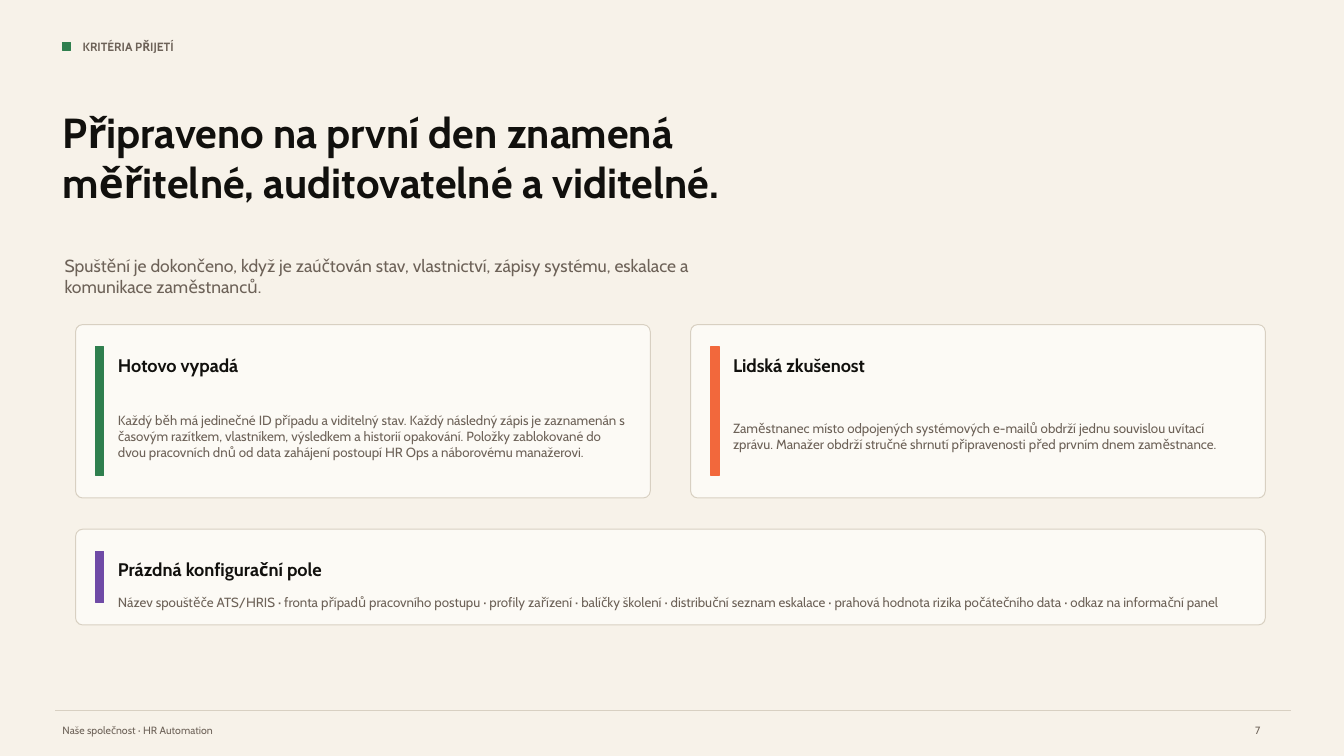
from lxml.etree import SubElement
from pptx import Presentation
from pptx.dml.color import RGBColor
from pptx.enum.shapes import MSO_CONNECTOR, MSO_SHAPE
from pptx.enum.text import MSO_ANCHOR, MSO_AUTO_SIZE, PP_ALIGN
from pptx.oxml.ns import qn
from pptx.util import Pt

PX = 9144
FONT = "Cabin"
CREAM = RGBColor(0xF7, 0xF2, 0xE9)
IVORY = RGBColor(0xFC, 0xFA, 0xF5)
SAND = RGBColor(0xD8, 0xD0, 0xC2)
INK = RGBColor(0x11, 0x10, 0x0D)
BROWN = RGBColor(0x6D, 0x62, 0x58)
GREEN = RGBColor(0x2F, 0x7F, 0x4E)
ORANGE = RGBColor(0xF2, 0x68, 0x3C)
PURPLE = RGBColor(0x6F, 0x4A, 0xA6)

CARD_RADIUS = 7
CARD_TOP, CARD_LEFT, CARD_WIDTH, CARD_STEP = 322, 75, 570, 610
TOP_CARDS = [
    ("Hotovo vypadá",
     "Každý běh má jedinečné ID případu a viditelný stav. Každý následný zápis je "
     "zaznamenán s časovým razítkem, vlastníkem, výsledkem a historií opakování. "
     "Položky zablokované do dvou pracovních dnů od data zahájení postoupí HR Ops "
     "a náborovému manažerovi.", GREEN),
    ("Lidská zkušenost",
     "Zaměstnanec místo odpojených systémových e-mailů obdrží jednu souvislou "
     "uvítací zprávu. Manažer obdrží stručné shrnutí připravenosti před prvním "
     "dnem zaměstnance.", ORANGE),
]
CONFIG_CARD = (
    "Prázdná konfigurační pole",
    "Název spouštěče ATS/HRIS · fronta případů pracovního postupu · profily zařízení · "
    "balíčky školení · distribuční seznam eskalace · prahová hodnota rizika "
    "počátečního data · odkaz na informační panel", PURPLE)


def emu(*lengths):
    """Turn px lengths into EMU."""
    return [length * PX for length in lengths]


def write(shape, text, size, color, bold=False):
    """Fill a shape with one left-aligned, vertically centred paragraph."""
    frame = shape.text_frame
    frame.word_wrap = True
    frame.auto_size = MSO_AUTO_SIZE.NONE
    frame.vertical_anchor = MSO_ANCHOR.MIDDLE
    frame.margin_left = frame.margin_right = frame.margin_top = frame.margin_bottom = 0
    frame.text = text
    para = frame.paragraphs[0]
    para.alignment = PP_ALIGN.LEFT
    para.font.name, para.font.size, para.font.bold = FONT, Pt(size), bold
    para.font.color.rgb = color


def add_text(page, box, text, size, color, bold=False):
    """Add a text box in the given box."""
    write(page.shapes.add_textbox(*emu(*box)), text, size, color, bold)


def add_block(page, kind, box, fill, line, weight):
    """Add a filled and outlined preset shape."""
    block = page.shapes.add_shape(kind, *emu(*box))
    block.shadow.inherit = False
    block.fill.solid()
    block.fill.fore_color.rgb = fill
    block.line.color.rgb = line
    block.line.width = Pt(weight)
    return block


def add_header(page, left, top):
    """Place the section label, the title and the lead text."""
    add_block(page, MSO_SHAPE.RECTANGLE, (left, top + 8, 8, 8), GREEN, GREEN, 1)
    add_text(page, (left + 20, top, 580, 25), "KRITÉRIA PŘIJETÍ", 8.5, BROWN, True)
    title = page.shapes.title
    title.left, title.top, title.width, title.height = emu(left, top + 54, 680, 135)
    write(title, "Připraveno na první den znamená měřitelné, auditovatelné a viditelné.",
          30, INK, True)
    add_text(page, (left + 2, top + 201, 635, 78),
             "Spuštění je dokončeno, když je zaúčtován stav, vlastnictví, zápisy systému, "
             "eskalace a komunikace zaměstnanců.", 12.5, BROWN)


def add_card(page, box, heading, body, accent):
    """Place a rounded card with an accent bar, a heading and a body."""
    left, top, width, height = box
    card = add_block(page, MSO_SHAPE.ROUNDED_RECTANGLE, box, IVORY, SAND, 0.7)
    card.adjustments[0] = CARD_RADIUS / height
    add_block(page, MSO_SHAPE.RECTANGLE, (left + 20, top + 22, 8, height - 44),
              accent, accent, 1)
    text_left, text_width = left + 42, width - 65
    add_text(page, (text_left, top + 25, text_width, 30), heading, 13, INK, True)
    add_text(page, (text_left, top + 68, text_width, height - 86), body, 9.5, BROWN)


def add_footer(page, left, top, width):
    """Place the footer rule, the deck name and the page number."""
    rule = page.shapes.add_connector(MSO_CONNECTOR.STRAIGHT,
                                     *emu(left, top, left + width, top))
    rule.line.color.rgb = SAND
    rule.line.width = Pt(0.6)
    SubElement(rule._element.spPr, qn("a:effectLst"))
    add_text(page, (left + 7, top + 10, 440, 18), "Naše společnost · HR Automation",
             7.5, BROWN)
    add_text(page, (left + 1190, top + 10, 67, 18), "7", 7.5, BROWN)


def main():
    """Build and save the deck."""
    deck = Presentation()
    deck.slide_width, deck.slide_height = emu(1333, 750)
    page = deck.slides.add_slide(deck.slide_layouts[5])
    page.background.fill.solid()
    page.background.fill.fore_color.rgb = CREAM
    add_footer(page, 55, 705, 1225)
    add_header(page, 62, 34)
    for index, card in enumerate(TOP_CARDS):
        add_card(page, (CARD_LEFT + index * CARD_STEP, CARD_TOP, CARD_WIDTH, 172), *card)
    add_card(page, (CARD_LEFT, 525, CARD_STEP + CARD_WIDTH, 95), *CONFIG_CARD)
    deck.save("out.pptx")


if __name__ == "__main__":
    main()
